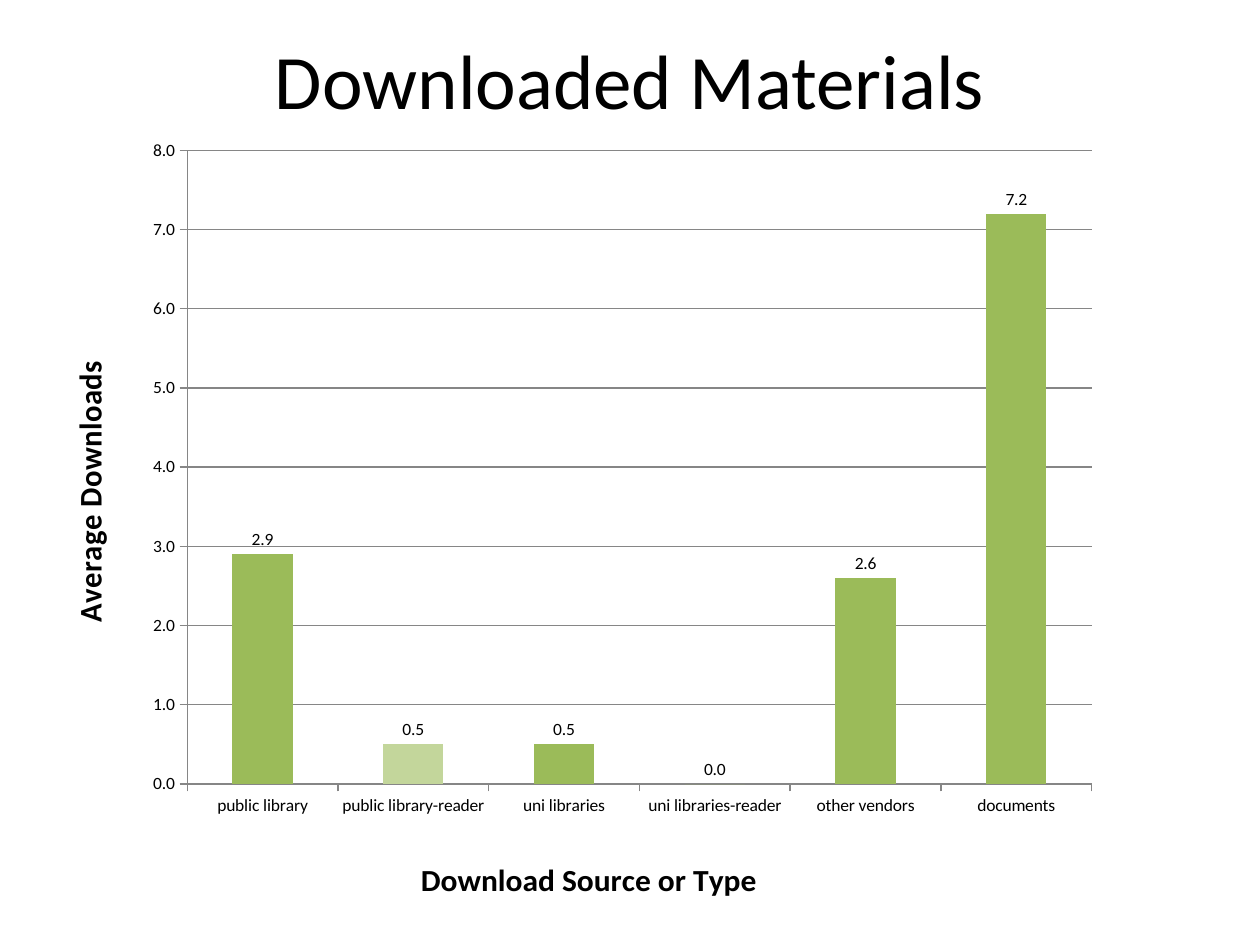
from lxml import etree
from pptx import Presentation
from pptx.chart.data import CategoryChartData
from pptx.dml.color import RGBColor
from pptx.enum.chart import XL_CHART_TYPE as ChartType, XL_LABEL_POSITION as LabelPos, XL_TICK_MARK as Tick
from pptx.enum.text import MSO_ANCHOR, PP_ALIGN
from pptx.oxml.ns import qn
from pptx.util import Pt

TITLE = "Downloaded Materials"
DOWNLOADS = [
    ("public library", 2.9),
    ("public library-reader", 0.5),
    ("uni libraries", 0.5),
    ("uni libraries-reader", 0),
    ("other vendors", 2.6),
    ("documents", 7.2),
]
HIGHLIGHT = 1
FONT = "Calibri"
BLACK = RGBColor(0, 0, 0)
GRAY = RGBColor(0x86, 0x86, 0x86)
GREEN = RGBColor(0x9B, 0xBB, 0x59)
PALE_GREEN = RGBColor(0xC3, 0xD6, 0x9B)


def style(font, size, bold=False):
    font.name, font.size, font.bold = FONT, Pt(size), bold
    font.color.rgb = BLACK


def place(parent, index, **percents):
    """Give a chart part a manual layout, in percent of the chart."""
    for old in parent.findall(qn("c:layout")):
        parent.remove(old)
    layout = etree.Element(qn("c:layout"))
    manual = etree.SubElement(layout, qn("c:manualLayout"))
    if "w" in percents:
        etree.SubElement(manual, qn("c:layoutTarget")).set("val", "inner")
    for key in ("x", "y"):
        etree.SubElement(manual, qn(f"c:{key}Mode")).set("val", "edge")
    for key, value in percents.items():
        etree.SubElement(manual, qn(f"c:{key}")).set("val", str(value / 100))
    parent.insert(index, layout)


def format_axis(axis, title, x, y):
    tf = axis.axis_title.text_frame
    tf.text = title
    style(tf.paragraphs[0].runs[0].font, 18, True)
    place(axis.axis_title._element, 1, x=x, y=y)
    style(axis.tick_labels.font, 10)
    axis.major_tick_mark, axis.minor_tick_mark = Tick.OUTSIDE, Tick.NONE
    axis.format.line.color.rgb = GRAY


prs = Presentation()
prs.slide_width, prs.slide_height = Pt(720), Pt(540)
s = prs.slides.add_slide(prs.slide_layouts[5])

title = s.shapes.title
title.left, title.top, title.width, title.height = Pt(36), Pt(0), Pt(648), Pt(90)
tf = title.text_frame
tf.text = TITLE
tf.vertical_anchor = MSO_ANCHOR.MIDDLE
p = tf.paragraphs[0]
p.alignment = PP_ALIGN.CENTER
style(p.runs[0].font, 44)

data = CategoryChartData(number_format="0.0")
data.categories = [name for name, _ in DOWNLOADS]
data.add_series("Series 1", [value for _, value in DOWNLOADS])
chart = s.shapes.add_chart(
    ChartType.COLUMN_CLUSTERED, Pt(30), Pt(72), Pt(606), Pt(447), data).chart
chart.has_legend = chart.has_title = False
style(chart.font, 10)
place(chart._chartSpace.chart.plotArea, 0, x=12.7, y=3.2, w=85.3, h=83.2)

format_axis(chart.category_axis, "Download Source or Type", 34.2, 95.4)
values = chart.value_axis
format_axis(values, "Average Downloads", 0.9, 31)
values.minimum_scale, values.maximum_scale, values.major_unit = 0, 8, 1
values.tick_labels.number_format = "0.0"
values.tick_labels.number_format_is_linked = False
values.has_major_gridlines = True
values.major_gridlines.format.line.color.rgb = GRAY

plot = chart.plots[0]
plot.gap_width = 150
plot.vary_by_categories = False
series = plot.series[0]
for fmt, color in ((series.format, GREEN), (series.points[HIGHLIGHT].format, PALE_GREEN)):
    fmt.fill.solid()
    fmt.fill.fore_color.rgb = color
labels = series.data_labels
labels.show_value = True
labels.number_format, labels.number_format_is_linked = "0.0", False
labels.position = LabelPos.OUTSIDE_END
style(labels.font, 10)

prs.save("out.pptx")
